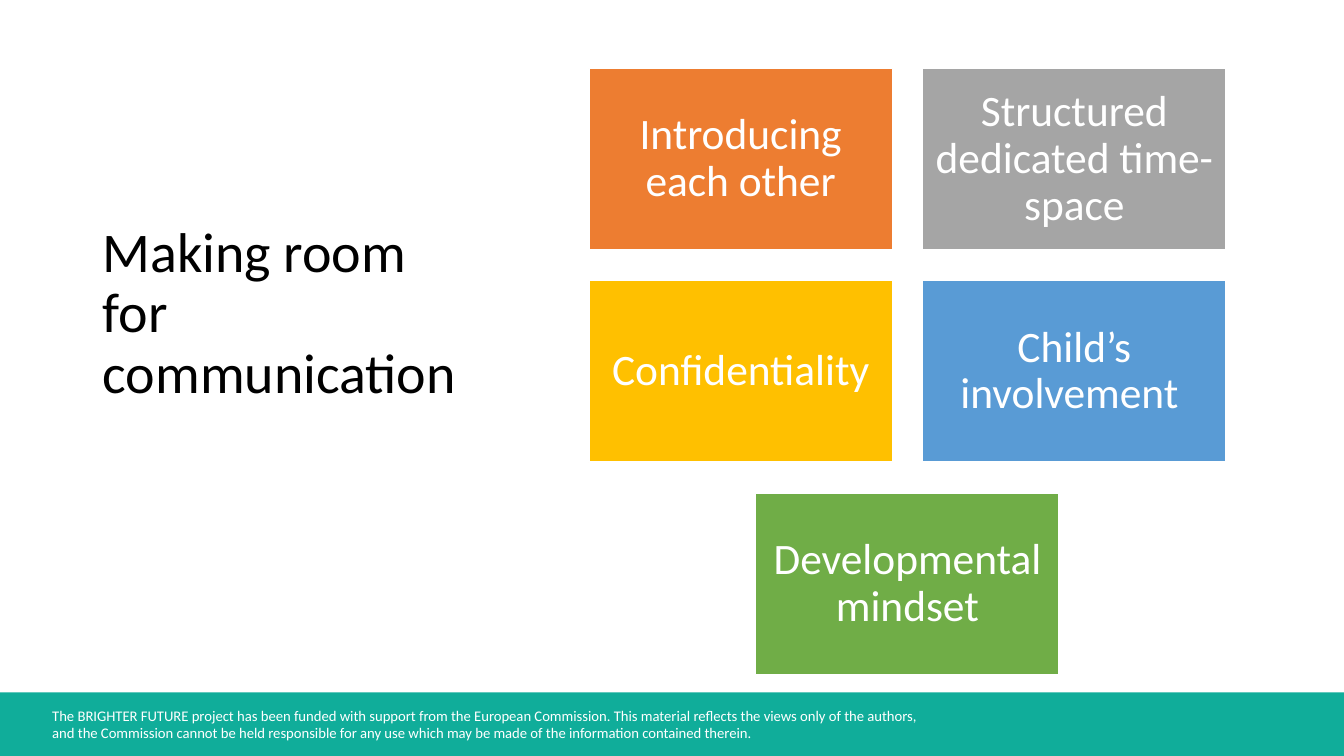
from dataclasses import dataclass

from pptx import Presentation
from pptx.dml.color import RGBColor
from pptx.enum import shapes, text
from pptx.util import Inches, Pt


@dataclass(frozen=True)
class Theme:
    font: str = "Calibri"
    white: str = "FFFFFF"
    black: str = "000000"
    teal: str = "10AD9A"
    orange: str = "ED7D31"
    gray: str = "A5A5A5"
    gold: str = "FFC000"
    blue: str = "599BD5"
    green: str = "70AD47"
    title_size: float = 40
    card_size: float = 31
    footer_size: float = 10.5


theme = Theme()


def add_block(left, top, width, height, fill):
    block = slide.shapes.add_shape(
        shapes.MSO_SHAPE.RECTANGLE,
        Inches(left), Inches(top), Inches(width), Inches(height))
    block.shadow.inherit = False
    block.fill.solid()
    block.fill.fore_color.rgb = RGBColor.from_string(fill)
    block.line.fill.background()
    return block


def write(shape, lines, size, color, align, anchor, inset, spacing):
    frame = shape.text_frame
    frame.word_wrap = True
    frame.vertical_anchor = anchor
    frame.margin_left = frame.margin_right = Inches(inset[0])
    frame.margin_top = frame.margin_bottom = Inches(inset[1])
    paragraph = frame.paragraphs[0]
    paragraph.alignment = align
    paragraph.line_spacing = spacing
    for index, line in enumerate(lines):
        if index:
            paragraph.add_line_break()
        run = paragraph.add_run()
        run.text = line
        run.font.name = theme.font
        run.font.size = Pt(size)
        run.font.color.rgb = RGBColor.from_string(color)


prs = Presentation()
prs.slide_width, prs.slide_height = Inches(13.33), Inches(7.5)
slide = prs.slides.add_slide(prs.slide_layouts[6])

# Footer band with the funding notice
add_block(0, 6.87, 13.33, 0.63, theme.teal)
funding_notice = slide.shapes.add_textbox(
    Inches(0.42), Inches(6.96), Inches(10), Inches(0.45))
write(funding_notice, [
    "The BRIGHTER FUTURE project has been funded with support from the European "
    "Commission. This material reflects the views only of the authors,",
    "and the Commission cannot be held responsible for any use which may be made "
    "of the information contained therein.",
], theme.footer_size, theme.white, text.PP_ALIGN.LEFT, text.MSO_ANCHOR.TOP,
    (0.1, 0.05), 1.0)

# Title
title = slide.shapes.add_textbox(
    Inches(0.92), Inches(0.61), Inches(3.93), Inches(5.02))
write(title, ["Making room for communication"], theme.title_size, theme.black,
      text.PP_ALIGN.LEFT, text.MSO_ANCHOR.MIDDLE, (0.1, 0.05), 0.9)

# Topic cards: rows of two, the last row centred
card_width, card_height, gap = 3.01, 1.8, 0.3
grid_left, grid_top, row_step = 5.84, 0.68, 2.105
grid_width = 2 * card_width + gap
topic_rows = [
    [("Introducing each other", theme.orange),
     ("Structured dedicated time-space", theme.gray)],
    [("Confidentiality", theme.gold),
     ("Child’s involvement ", theme.blue)],
    [("Developmental mindset", theme.green)],
]
for row, topics in enumerate(topic_rows):
    row_width = len(topics) * (card_width + gap) - gap
    row_left = grid_left + (grid_width - row_width) / 2
    for column, (topic, fill) in enumerate(topics):
        card = add_block(row_left + column * (card_width + gap),
                         grid_top + row * row_step,
                         card_width, card_height, fill)
        card.line.color.rgb = RGBColor.from_string(theme.white)
        card.line.width = Pt(1)
        write(card, [topic], theme.card_size, theme.white,
              text.PP_ALIGN.CENTER, text.MSO_ANCHOR.MIDDLE, (0.13, 0.13), 0.9)

prs.save("out.pptx")
